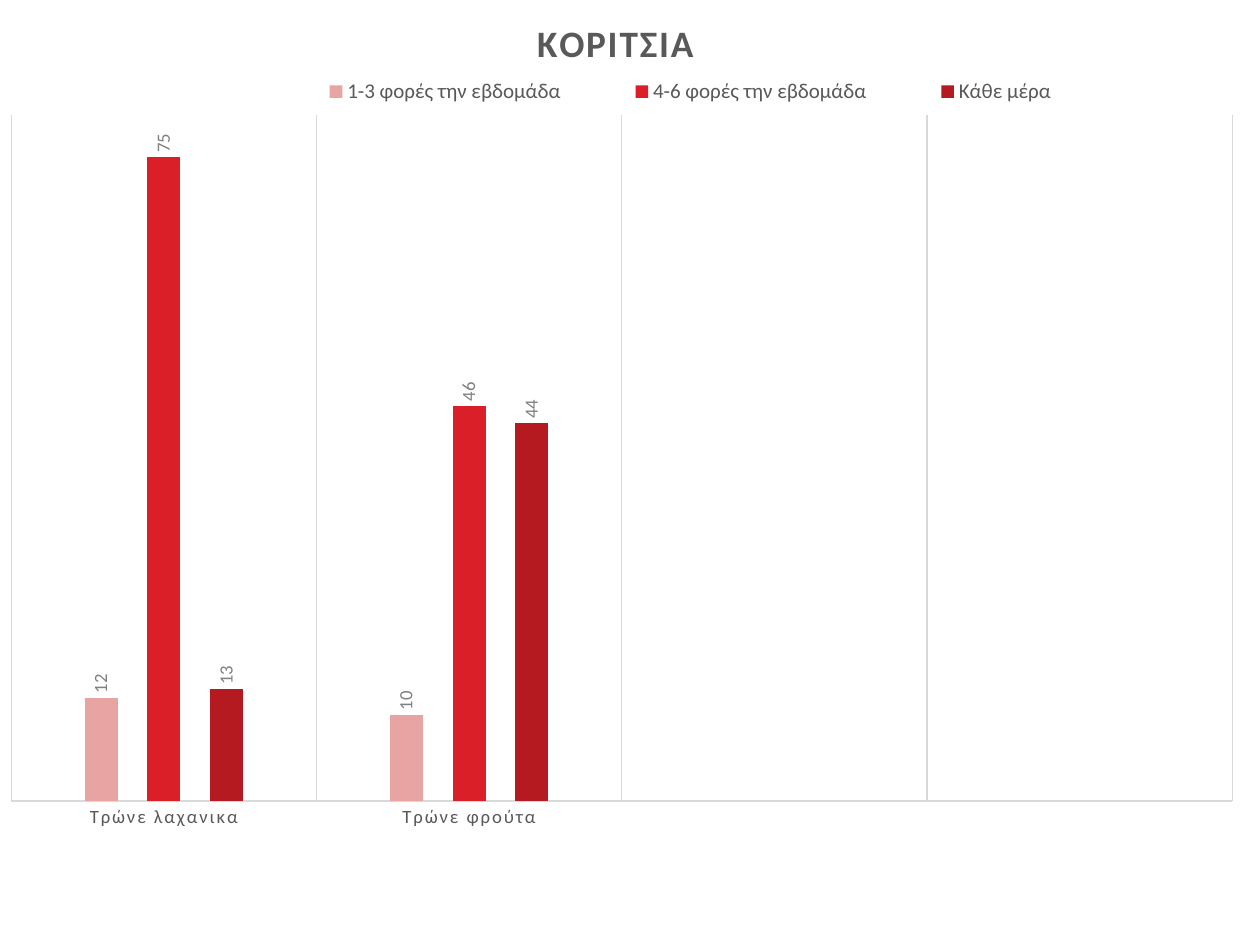
from lxml import etree
from pptx import Presentation
from pptx.chart.data import CategoryChartData
from pptx.dml.color import RGBColor
from pptx.enum.chart import (XL_CHART_TYPE, XL_LABEL_POSITION,
                             XL_LEGEND_POSITION, XL_TICK_MARK)
from pptx.oxml.ns import qn
from pptx.util import Inches, Pt

CLUSTERED = XL_CHART_TYPE.COLUMN_CLUSTERED
OUTSIDE_END = XL_LABEL_POSITION.OUTSIDE_END
LEGEND_TOP = XL_LEGEND_POSITION.TOP
NO_TICK = XL_TICK_MARK.NONE

COLORS = {"text": "595959", "label": "808080", "line": "D9D9D9",
          "seldom": "E8A3A3", "often": "DA1F28", "daily": "B51A21"}
FONT = "Calibri"
LETTER_SPACING = "120"
CATEGORIES = ["Τρώνε λαχανικα", "Τρώνε φρούτα", "", ""]
SERIES = [
    ("1-3 φορές την εβδομάδα", [12, 10, None, None], "seldom"),
    ("4-6 φορές την εβδομάδα", [75, 46, None, None], "often"),
    ("Κάθε μέρα", [13, 44, None, None], "daily"),
]
CHART_BOX = (-0.12, -0.11, 10, 7.61)


def rgb(name):
    return RGBColor.from_string(COLORS[name])


def style_font(font, color, **settings):
    font.name = FONT
    font.color.rgb = rgb(color)
    for name, value in settings.items():
        setattr(font, name, value)


def style_line(line):
    line.width = Pt(0.75)
    line.color.rgb = rgb("line")


def set_layout(parent, index, shares, inner=False):
    """Place a chart part by its shares of the chart's width and height."""
    for old in parent.findall(qn("c:layout")):
        parent.remove(old)
    layout = etree.Element(qn("c:layout"))
    manual = etree.SubElement(layout, qn("c:manualLayout"))
    values = {"layoutTarget": "inner"} if inner else {}
    values.update(xMode="edge", yMode="edge")
    values.update(zip("xywh", shares))
    for name, value in values.items():
        etree.SubElement(manual, qn(f"c:{name}")).set("val", str(value))
    parent.insert(index, layout)


def add_title(chart):
    frame = chart.chart_title.text_frame
    frame.text = "ΚΟΡΙΤΣΙΑ"
    span = frame.paragraphs[0].runs[0]
    style_font(span.font, "text", size=Pt(21.28), bold=True)
    span.font._element.set("spc", LETTER_SPACING)
    chart.chart_title.include_in_layout = False
    set_layout(chart.element.find(".//" + qn("c:title")), 1, (0.433, 0.026))


def add_legend(chart):
    chart.has_legend = True
    legend = chart.legend
    legend.position = LEGEND_TOP
    legend.include_in_layout = False
    style_font(legend.font, "text", size=Pt(12))
    set_layout(chart.element.find(".//" + qn("c:legend")), 1,
               (0.22, 0.085, 0.68, 0.05))


def style_axes(chart):
    values = chart.value_axis
    values.minimum_scale, values.maximum_scale = 0, 80
    values.has_major_gridlines = False
    values.visible = False

    groups = chart.category_axis
    groups.major_tick_mark = groups.minor_tick_mark = NO_TICK
    groups.has_major_gridlines = True
    style_line(groups.major_gridlines.format.line)
    style_line(groups.format.line)
    font = groups.tick_labels.font
    style_font(font, "text", size=Pt(10.64))
    font._element.set("spc", LETTER_SPACING)


def style_columns(chart):
    plot = chart.plots[0]
    plot.gap_width, plot.overlap, plot.vary_by_categories = 444, -90, False
    for series, (_, _, color) in zip(plot.series, SERIES):
        series.format.fill.solid()
        series.format.fill.fore_color.rgb = rgb(color)
        labels = series.data_labels
        labels.show_value = True
        labels.position = OUTSIDE_END
        style_font(labels.font, "label", size=Pt(10.64))
    for body in chart.element.findall(f".//{qn('c:dLbls')}//{qn('a:bodyPr')}"):
        body.set("rot", "-5400000")
        body.set("vert", "horz")
    set_layout(chart.element.find(".//" + qn("c:plotArea")), 0,
               (0.021, 0.134, 0.969, 0.716), inner=True)


def add_food_chart(page, box):
    data = CategoryChartData()
    data.categories = CATEGORIES
    for name, values, _ in SERIES:
        data.add_series(name, values)
    chart = page.shapes.add_chart(CLUSTERED, *map(Inches, box), data).chart
    style_font(chart.font, "text", size=Pt(10))
    add_title(chart)
    add_legend(chart)
    style_axes(chart)
    style_columns(chart)


def main():
    deck = Presentation()
    deck.slide_width, deck.slide_height = Inches(10), Inches(7.5)
    page = deck.slides.add_slide(deck.slide_layouts[6])
    add_food_chart(page, CHART_BOX)
    deck.save("out.pptx")


if __name__ == "__main__":
    main()
